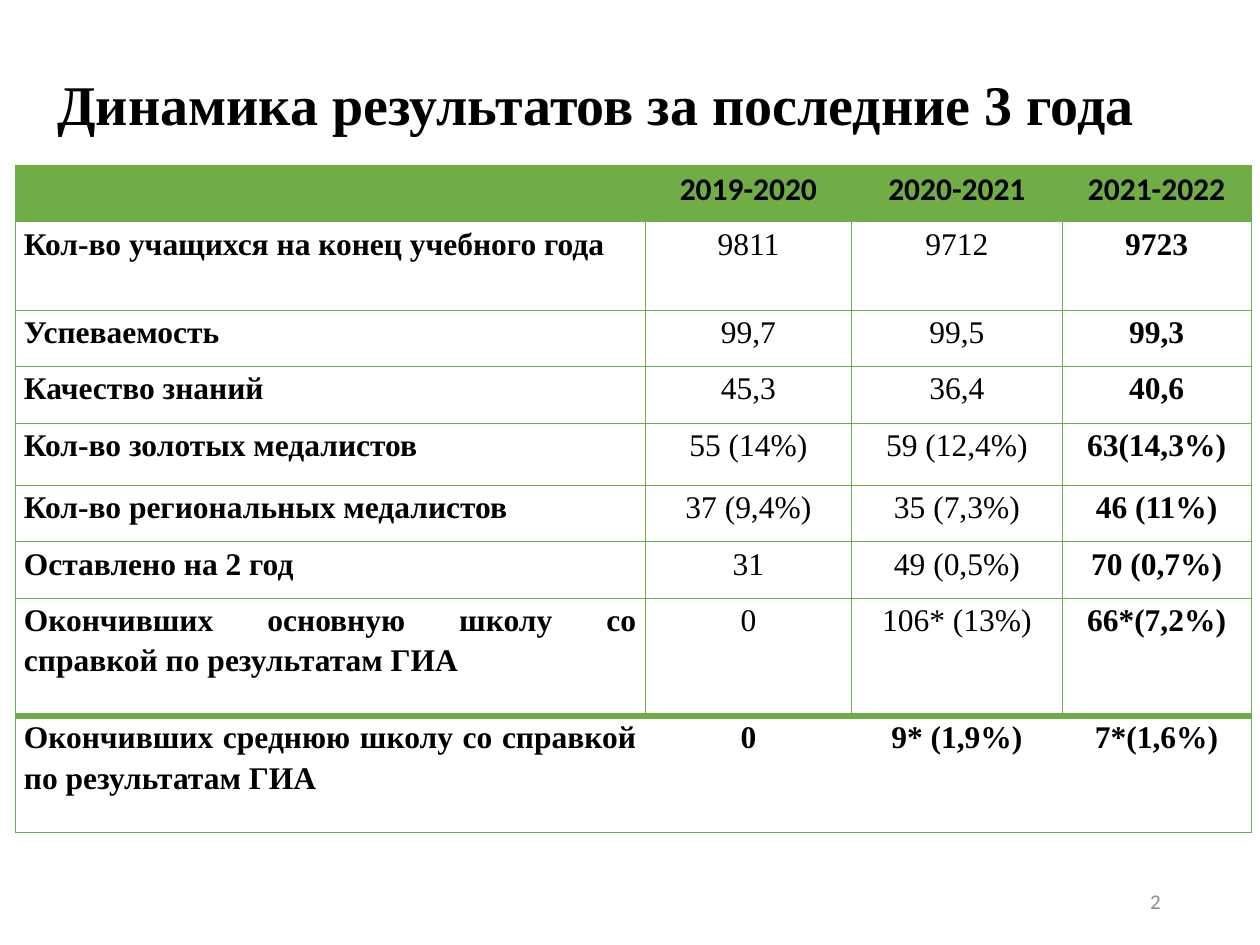
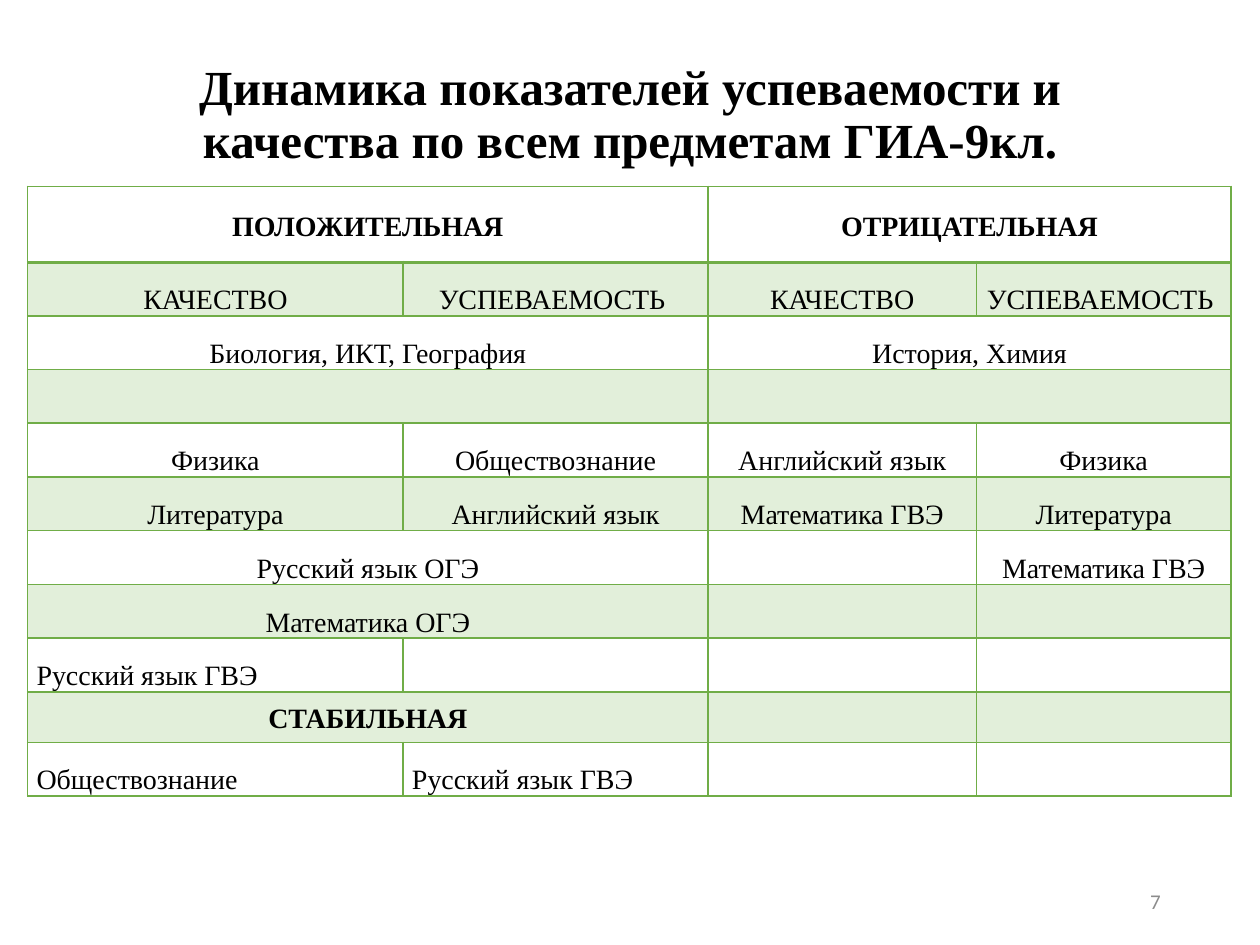
from dataclasses import dataclass
from typing import Optional

from lxml import etree
from pptx import Presentation
from pptx.dml.color import RGBColor
from pptx.enum import text as t
from pptx.oxml import ns
from pptx.util import Inches, Pt

LEFT, CENTER, RIGHT, JUSTIFY = (
    t.PP_ALIGN.LEFT, t.PP_ALIGN.CENTER, t.PP_ALIGN.RIGHT, t.PP_ALIGN.JUSTIFY)
TOP, MIDDLE, BOTTOM = t.MSO_ANCHOR.TOP, t.MSO_ANCHOR.MIDDLE, t.MSO_ANCHOR.BOTTOM
NO_GRID_STYLE = "{2D5ABB26-0587-4C30-8999-92F81FD0307C}"


@dataclass(frozen=True)
class Theme:
    green: str = "70AD47"
    pale_green: str = "E2EFDA"
    black: str = "000000"
    gray: str = "8C8C8C"
    serif: str = "Times New Roman"
    sans: str = "Calibri"
    results_title: int = 32
    subjects_title: int = 28
    results_text: int = 18
    subjects_text: int = 16
    page_number: int = 12


THEME = Theme()


@dataclass(frozen=True)
class TextStyle:
    size: int
    font: str = THEME.serif
    color: str = THEME.black
    bold: bool = False
    align: t.PP_ALIGN = CENTER
    spacing: float = 1.15


@dataclass(frozen=True)
class Cell:
    text: str
    style: TextStyle
    anchor: t.MSO_ANCHOR
    fill: Optional[str]
    borders: dict[str, float]
    span: int = 1


@dataclass(frozen=True)
class Grid:
    left: float
    top: float
    columns: list[float]
    rows: list[float]


def write(frame, content: str, style: TextStyle) -> None:
    frame.text = content
    para = frame.paragraphs[0]
    para.alignment = style.align
    para.line_spacing = style.spacing
    para.font.size = Pt(style.size)
    for span in para.runs:
        span.font.name = style.font
        span.font.size = Pt(style.size)
        span.font.bold = style.bold
        span.font.color.rgb = RGBColor.from_string(style.color)


def add_text(page, place: tuple[float, ...], content: str, style: TextStyle,
             bottom_inset: float = 0.05) -> None:
    box = page.shapes.add_textbox(*map(Inches, place))
    frame = box.text_frame
    frame.word_wrap = True
    frame.vertical_anchor = MIDDLE
    frame.margin_bottom = Inches(bottom_inset)
    write(frame, content, style)


def add_title(page, place: tuple[float, ...], content: str, size: int,
              bottom_inset: float = 0.05) -> None:
    style = TextStyle(size, bold=True, spacing=0.9)
    add_text(page, place, content, style, bottom_inset)


def add_page_number(page, number: int) -> None:
    style = TextStyle(THEME.page_number, THEME.sans, THEME.gray, align=RIGHT, spacing=1.0)
    add_text(page, (7.06, 6.95, 2.25, 0.4), str(number), style)


def set_borders(cell, borders: dict[str, float]) -> None:
    """Draw green cell edges; the keys are L, R, T, B and the values are points."""
    properties = cell.fill._xPr
    for index, side in enumerate(side for side in "LRTB" if side in borders):
        line = etree.Element(ns.qn(f"a:ln{side}"), w=str(Pt(borders[side])))
        fill = etree.SubElement(line, ns.qn("a:solidFill"))
        etree.SubElement(fill, ns.qn("a:srgbClr"), val=THEME.green)
        properties.insert(index, line)


def add_table(page, grid: Grid, rows: list[list[Optional[Cell]]]) -> None:
    """Draw the cells; None marks a place covered by the cell on its left."""
    holder = page.shapes.add_table(
        len(grid.rows), len(grid.columns), Inches(grid.left), Inches(grid.top),
        Inches(sum(grid.columns)), Inches(sum(grid.rows)))
    table = holder.table
    table.first_row = table.horz_banding = False
    for style_id in holder.element.iter(ns.qn("a:tableStyleId")):
        style_id.text = NO_GRID_STYLE
    for column, width in zip(table.columns, grid.columns):
        column.width = Inches(width)
    for row, height in zip(table.rows, grid.rows):
        row.height = Inches(height)
    for r, cells in enumerate(rows):
        for c, content in enumerate(cells):
            if content is None:
                continue
            cell = table.cell(r, c)
            if content.span > 1:
                cell.merge(table.cell(r, c + content.span - 1))
            cell.margin_left = cell.margin_right = Inches(0.07)
            cell.margin_top = cell.margin_bottom = 0
            cell.vertical_anchor = content.anchor
            write(cell.text_frame, content.text, content.style)
            if content.fill:
                cell.fill.solid()
                cell.fill.fore_color.rgb = RGBColor.from_string(content.fill)
            else:
                cell.fill.background()
            set_borders(cell, content.borders)


RESULTS = [
    ("", "2019-2020", "2020-2021", "2021-2022"),
    ("Кол-во учащихся на конец учебного года", "9811", "9712", "9723"),
    ("Успеваемость", "99,7", "99,5", "99,3"),
    ("Качество знаний", "45,3", "36,4", "40,6"),
    ("Кол-во золотых медалистов", "55 (14%)", "59 (12,4%)", "63(14,3%)"),
    ("Кол-во региональных медалистов", "37 (9,4%)", "35 (7,3%)", "46 (11%)"),
    ("Оставлено на 2 год", "31", "49 (0,5%)", "70 (0,7%)"),
    ("Окончивших основную школу со справкой по результатам ГИА",
     "0", "106* (13%)", "66*(7,2%)"),
    ("Окончивших среднюю школу со справкой по результатам ГИА",
     "0", "9* (1,9%)", "7*(1,6%)"),
]

SUBJECTS = [
    ("ПОЛОЖИТЕЛЬНАЯ", None, "ОТРИЦАТЕЛЬНАЯ", None),
    ("КАЧЕСТВО", "УСПЕВАЕМОСТЬ ", "КАЧЕСТВО", "УСПЕВАЕМОСТЬ "),
    ("Биология, ИКТ, География", None, "История, Химия", None),
    ("", None, "", None),
    ("Физика", "Обществознание", "Английский язык", "Физика"),
    ("Литература", "Английский язык", "Математика ГВЭ", "Литература"),
    ("Русский язык ОГЭ", None, "", "Математика ГВЭ"),
    ("Математика ОГЭ", None, "", ""),
    ("Русский язык ГВЭ", "", "", ""),
    ("СТАБИЛЬНАЯ", None, "", ""),
    ("Обществознание", "Русский язык ГВЭ", "", ""),
]
SUBJECT_HEADING_ROWS = (0, 9)
LEFT_ALIGNED_ROWS = (8, 10)


def result_cell(r: int, c: int, content: str) -> Cell:
    last_row, last_column = len(RESULTS) - 1, len(RESULTS[0]) - 1
    style = TextStyle(
        THEME.results_text,
        font=THEME.sans if r == 0 else THEME.serif,
        bold=r in (0, last_row) or c in (0, last_column),
        align=JUSTIFY if c == 0 else CENTER)
    borders = dict.fromkeys("LRTB", 0.5)
    if r == last_row:
        borders["T"] = 4
        if c > 0:
            del borders["L"]
        if c < last_column:
            del borders["R"]
    elif r == last_row - 1:
        borders["B"] = 4
    return Cell(content, style, TOP, THEME.green if r == 0 else None, borders)


def subject_cell(r: int, c: int, content: Optional[str]) -> Optional[Cell]:
    if content is None:
        return None
    heading = r in SUBJECT_HEADING_ROWS
    style = TextStyle(THEME.subjects_text, bold=heading,
                      align=LEFT if r in LEFT_ALIGNED_ROWS else CENTER)
    borders = dict.fromkeys("LRTB", 1.0)
    if r < 2:
        borders["B" if r == 0 else "T"] = 2
    covers_next = None in SUBJECTS[r][c + 1:c + 2]
    return Cell(content, style, MIDDLE if heading else BOTTOM,
                THEME.pale_green if r % 2 else None, borders, 2 if covers_next else 1)


def build_cells(rows, make_cell) -> list[list[Optional[Cell]]]:
    return [[make_cell(r, c, content) for c, content in enumerate(row)]
            for r, row in enumerate(rows)]


def add_results_slide(page) -> None:
    add_title(page, (0.26, 0.4, 9.05, 0.91),
              "Динамика результатов за последние 3 года ", THEME.results_title)
    grid = Grid(0.12, 1.31, [5, 1.64, 1.67, 1.5],
                [0.45, 0.7, 0.45, 0.45, 0.49, 0.45, 0.45, 0.93, 0.93])
    add_table(page, grid, build_cells(RESULTS, result_cell))
    add_page_number(page, 2)


def add_subjects_slide(page) -> None:
    add_title(page, (0.69, 0.4, 8.62, 1.45),
              "Динамика показателей успеваемости и качества по всем предметам ГИА-9кл.",
              THEME.subjects_title, bottom_inset=0.45)
    height, first, stable = 4.84, 0.6, 0.4
    regular = (height - first - stable) / (len(SUBJECTS) - 2)
    grid = Grid(0.22, 1.48, [2.98, 2.42, 2.13, 2.02],
                [first] + [regular] * 8 + [stable, regular])
    add_table(page, grid, build_cells(SUBJECTS, subject_cell))
    add_page_number(page, 7)


def main() -> None:
    deck = Presentation()
    deck.slide_width, deck.slide_height = Inches(10), Inches(7.5)
    blank = deck.slide_layouts[6]
    for fill_page in (add_results_slide, add_subjects_slide):
        fill_page(deck.slides.add_slide(blank))
    deck.save("out.pptx")


if __name__ == "__main__":
    main()
